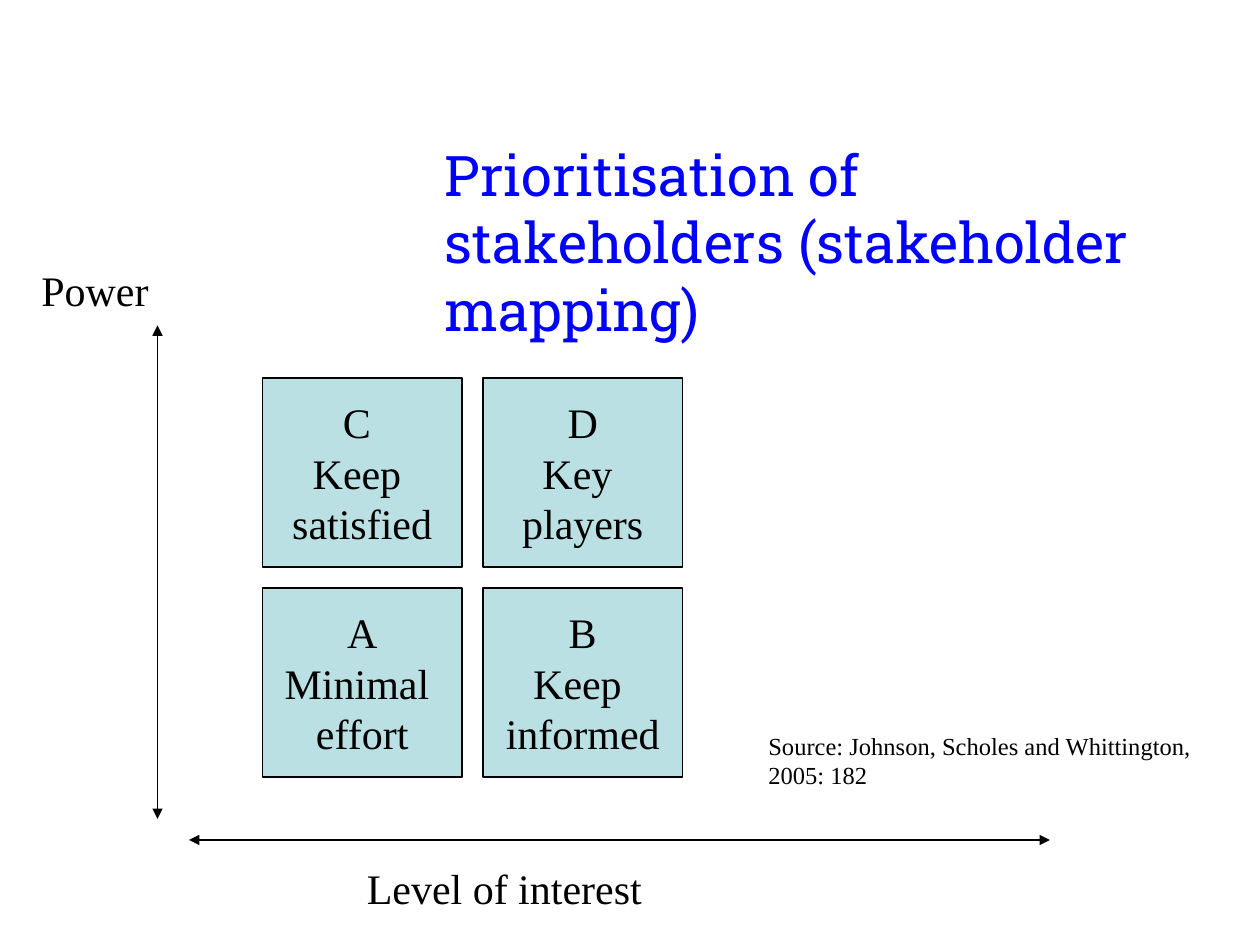
"""Build the stakeholder mapping slide."""
from lxml import etree
from pptx import Presentation
from pptx.dml.color import RGBColor
from pptx.enum.shapes import MSO_CONNECTOR, MSO_SHAPE
from pptx.enum.text import MSO_ANCHOR, MSO_AUTO_SIZE, PP_ALIGN
from pptx.oxml.ns import qn
from pptx.util import Pt

LINE, RECT = MSO_CONNECTOR.STRAIGHT, MSO_SHAPE.RECTANGLE
MIDDLE = MSO_ANCHOR.MIDDLE
FIT, FIXED = MSO_AUTO_SIZE.SHAPE_TO_FIT_TEXT, MSO_AUTO_SIZE.NONE
LEFT, CENTER = PP_ALIGN.LEFT, PP_ALIGN.CENTER
SERIF = "Times New Roman"


def color(code):
    """Return the colour for a hex string."""
    return RGBColor.from_string(code)


def write(frame, lines, size, align=LEFT, face=SERIF, ink="000000"):
    """Write one paragraph per line into a text frame."""
    for i, line in enumerate(lines):
        para = frame.add_paragraph() if i else frame.paragraphs[0]
        para.alignment = align
        run = para.add_run()
        run.text = line
        run.font.name = face
        run.font.size = Pt(size)
        run.font.color.rgb = color(ink)


deck = Presentation()
deck.slide_width, deck.slide_height = Pt(720), Pt(540)
slide = deck.slides.add_slide(deck.slide_layouts[5])
shapes = slide.shapes

title = shapes.title
title.left, title.top, title.width, title.height = Pt(247), Pt(93), Pt(425), Pt(90)
frame = title.text_frame
frame.word_wrap = True
frame.auto_size = FIXED
frame.vertical_anchor = MIDDLE
write(frame, ["Prioritisation of stakeholders (stakeholder mapping)"], 32,
      face="Roboto Slab", ink="0000FF")

for ends in [(108, 480, 600, 480), (90, 186, 90, 468)]:
    axis = shapes.add_connector(LINE, *map(Pt, ends))
    axis.line.color.rgb = color("000000")
    axis.line.width = Pt(0.75)
    stroke = axis.line._get_or_add_ln()
    for tip in ("a:headEnd", "a:tailEnd"):
        etree.SubElement(stroke, qn(tip)).set("type", "triangle")
    etree.SubElement(axis._element.spPr, qn("a:effectLst"))

labels = [
    (202.5, 489.5, 173, 36, 24, ["Level of interest"]),
    (16.5, 147.5, 76, 65, 24, ["Power"]),
    (432, 414, 257, 41, 14,
     ["Source: Johnson, Scholes and Whittington,", "2005: 182"]),
]
for x, y, wide, high, size, lines in labels:
    frame = shapes.add_textbox(Pt(x), Pt(y), Pt(wide), Pt(high)).text_frame
    frame.word_wrap = False
    frame.auto_size = FIT
    write(frame, lines, size)

grid = [
    [["C ", "Keep ", "satisfied"], ["D", "Key ", "players"]],
    [["A", "Minimal ", "effort"], ["B", "Keep ", "informed"]],
]
for row, cells in enumerate(grid):
    for col, lines in enumerate(cells):
        box = shapes.add_shape(RECT, Pt(150 + 126 * col), Pt(216 + 120 * row),
                               Pt(114), Pt(108))
        box.shadow.inherit = False
        box.fill.solid()
        box.fill.fore_color.rgb = color("BBE0E3")
        box.line.color.rgb = color("000000")
        box.line.width = Pt(0.75)
        box.text_frame.word_wrap = False
        box.text_frame.vertical_anchor = MIDDLE
        write(box.text_frame, lines, 24, CENTER)

deck.save("out.pptx")
